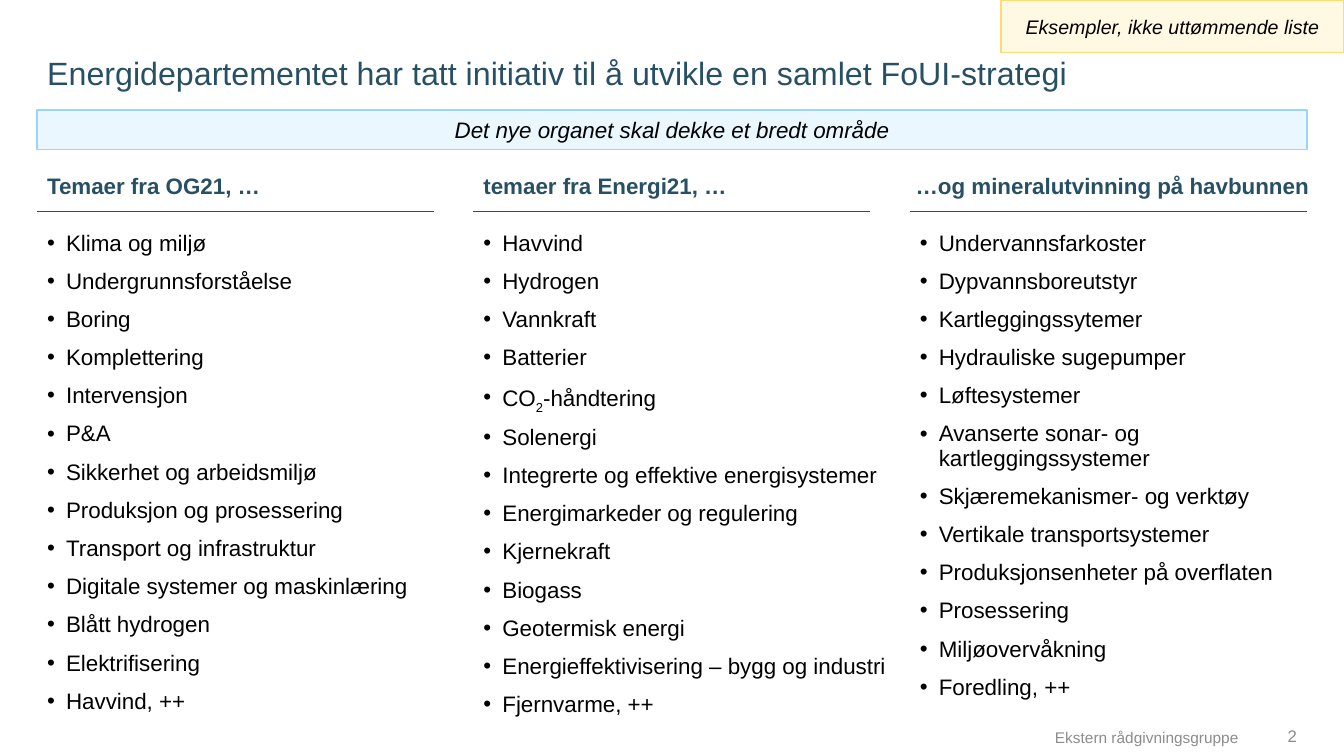
from dataclasses import dataclass

from lxml import etree
from pptx import Presentation
from pptx.dml.color import RGBColor
from pptx.enum.shapes import MSO_CONNECTOR, MSO_SHAPE
from pptx.enum.text import MSO_ANCHOR, MSO_AUTO_SIZE, PP_ALIGN
from pptx.oxml.ns import qn
from pptx.shapes.base import BaseShape
from pptx.slide import Slide
from pptx.util import Pt

LEFT, CENTER, RIGHT = PP_ALIGN.LEFT, PP_ALIGN.CENTER, PP_ALIGN.RIGHT
TOP, MIDDLE, BOTTOM = MSO_ANCHOR.TOP, MSO_ANCHOR.MIDDLE, MSO_ANCHOR.BOTTOM
RECTANGLE = MSO_SHAPE.RECTANGLE
STRAIGHT = MSO_CONNECTOR.STRAIGHT
NO_AUTOFIT = MSO_AUTO_SIZE.NONE

COLORS = {
    "heading": "285064",
    "body": "000000",
    "footer": "8C8C8C",
    "note_fill": "FFF8E3",
    "note_line": "FDDC73",
    "scope_fill": "EAF7FF",
    "scope_line": "97D5FF",
}
FONT = "Arial"
MARGIN = 26.5
CONTENT_WIDTH = 907
COLUMN_WIDTH = 283.6
WIDE_COLUMN = 304.6
COLUMN_STEP = (CONTENT_WIDTH - COLUMN_WIDTH) / 2
HEADING_TOP, HEADING_HEIGHT = 116.6, 34
RULE_Y = 151.2
LIST_TOP, LIST_HEIGHT = 162, 326
BULLET_INDENT = 13.6
SUBSCRIPT_MARK = "_"


@dataclass(frozen=True)
class Box:
    left: float
    top: float
    width: float
    height: float


@dataclass(frozen=True)
class Banner:
    box: Box
    text: str
    size: float
    palette: str


@dataclass(frozen=True)
class ThemeColumn:
    heading: str
    themes: tuple[str, ...]
    list_width: float = COLUMN_WIDTH
    heading_width: float = COLUMN_WIDTH
    heading_shift: float = 0


BANNERS = (
    Banner(Box(715, 0, 245, 37.6), "Eksempler, ikke uttømmende liste", 14, "note"),
    Banner(Box(MARGIN, 78.6, CONTENT_WIDTH, 28.2),
           "Det nye organet skal dekke et bredt område", 16, "scope"),
)

THEME_COLUMNS = (
    ThemeColumn("Temaer fra OG21, …", (
        "Klima og miljø", "Undergrunnsforståelse", "Boring", "Komplettering",
        "Intervensjon", "P&A", "Sikkerhet og arbeidsmiljø",
        "Produksjon og prosessering", "Transport og infrastruktur",
        "Digitale systemer og maskinlæring", "Blått hydrogen",
        "Elektrifisering", "Havvind, ++",
    )),
    ThemeColumn("temaer fra Energi21, …", (
        "Havvind", "Hydrogen", "Vannkraft", "Batterier", "CO_2_-håndtering",
        "Solenergi", "Integrerte og effektive energisystemer",
        "Energimarkeder og regulering", "Kjernekraft", "Biogass",
        "Geotermisk energi", "Energieffektivisering – bygg og industri",
        "Fjernvarme, ++",
    ), list_width=WIDE_COLUMN),
    ThemeColumn("…og mineralutvinning på havbunnen", (
        "Undervannsfarkoster", "Dypvannsboreutstyr", "Kartleggingssytemer",
        "Hydrauliske sugepumper", "Løftesystemer",
        "Avanserte sonar- og kartleggingssystemer",
        "Skjæremekanismer- og verktøy", "Vertikale transportsystemer",
        "Produksjonsenheter på overflaten", "Prosessering",
        "Miljøovervåkning", "Foredling, ++",
    ), heading_width=WIDE_COLUMN, heading_shift=-2.9),
)


def rgb(name: str) -> RGBColor:
    return RGBColor.from_string(COLORS[name])


def write_text(shape: BaseShape, *lines: str, size: float = 16, color: str = "body",
               bold: bool = False, italic: bool = False, align: PP_ALIGN = LEFT,
               anchor: MSO_ANCHOR = TOP, line_spacing: float = 1,
               bulleted: bool = False, right_inset: float = 7.2) -> None:
    frame = shape.text_frame
    frame.auto_size = NO_AUTOFIT
    frame.word_wrap = True
    frame.vertical_anchor = anchor
    frame.margin_left, frame.margin_right = Pt(7.2), Pt(right_inset)
    frame.margin_top = frame.margin_bottom = Pt(3.6)
    for index, line in enumerate(lines):
        paragraph = frame.add_paragraph() if index else frame.paragraphs[0]
        if bulleted:
            properties = paragraph._p.get_or_add_pPr()
            properties.set("marL", str(Pt(BULLET_INDENT)))
            properties.set("indent", str(-Pt(BULLET_INDENT)))
            etree.SubElement(properties, qn("a:buFont"), typeface=FONT)
            etree.SubElement(properties, qn("a:buChar"), char="•")
        paragraph.alignment = align
        paragraph.line_spacing = line_spacing
        paragraph.space_before = Pt(10 if index else 0)
        for part, text in enumerate(line.split(SUBSCRIPT_MARK)):
            run = paragraph.add_run()
            run.text = text
            run.font.name, run.font.size = FONT, Pt(size)
            run.font.bold, run.font.italic = bold, italic
            run.font.color.rgb = rgb(color)
            if part % 2:
                run._r.get_or_add_rPr().set("baseline", "-25000")


def place(shape: BaseShape, box: Box) -> None:
    shape.left, shape.top = Pt(box.left), Pt(box.top)
    shape.width, shape.height = Pt(box.width), Pt(box.height)


def add_text_box(slide: Slide, box: Box) -> BaseShape:
    return slide.shapes.add_textbox(Pt(box.left), Pt(box.top), Pt(box.width), Pt(box.height))


def add_banner(slide: Slide, banner: Banner) -> None:
    box = banner.box
    panel = slide.shapes.add_shape(
        RECTANGLE, Pt(box.left), Pt(box.top), Pt(box.width), Pt(box.height))
    panel.shadow.inherit = False
    panel.fill.solid()
    panel.fill.fore_color.rgb = rgb(f"{banner.palette}_fill")
    panel.line.color.rgb = rgb(f"{banner.palette}_line")
    panel.line.width = Pt(1)
    write_text(panel, banner.text, size=banner.size, italic=True, align=CENTER, anchor=MIDDLE)


def add_theme_column(slide: Slide, column: ThemeColumn, left: float) -> None:
    rule = slide.shapes.add_connector(
        STRAIGHT, Pt(left), Pt(RULE_Y), Pt(left + COLUMN_WIDTH), Pt(RULE_Y))
    rule.line.color.rgb = rgb("heading")
    rule.line.width = Pt(1)
    etree.SubElement(rule._element.spPr, qn("a:effectLst"))

    heading = add_text_box(slide, Box(left + column.heading_shift, HEADING_TOP,
                                      column.heading_width, HEADING_HEIGHT))
    write_text(heading, column.heading, color="heading", bold=True,
               anchor=MIDDLE, line_spacing=0.9)

    themes = add_text_box(slide, Box(left, LIST_TOP, column.list_width, LIST_HEIGHT))
    write_text(themes, *column.themes, line_spacing=0.9, bulleted=True)


def main() -> None:
    presentation = Presentation()
    presentation.slide_width, presentation.slide_height = Pt(960), Pt(540)
    slide = presentation.slides.add_slide(presentation.slide_layouts.get_by_name("Title Only"))

    title = slide.shapes.title
    place(title, Box(MARGIN, 37.4, CONTENT_WIDTH, 60))
    write_text(title, "Energidepartementet har tatt initiativ til å utvikle en samlet FoUI-strategi",
               size=23, color="heading", line_spacing=0.9)

    for index, column in enumerate(THEME_COLUMNS):
        add_theme_column(slide, column, MARGIN + index * COLUMN_STEP)
    for banner in BANNERS:
        add_banner(slide, banner)

    company = add_text_box(slide, Box(733.7, 502.6, 151.2, 34))
    write_text(company, "Ekstern rådgivningsgruppe", size=11, color="footer",
               align=RIGHT, anchor=BOTTOM, right_inset=0)
    page_number = add_text_box(slide, Box(899.5, 502.6, 34, 34))
    write_text(page_number, "2", size=12, color="footer", align=RIGHT, anchor=BOTTOM)

    presentation.save("out.pptx")


if __name__ == "__main__":
    main()
